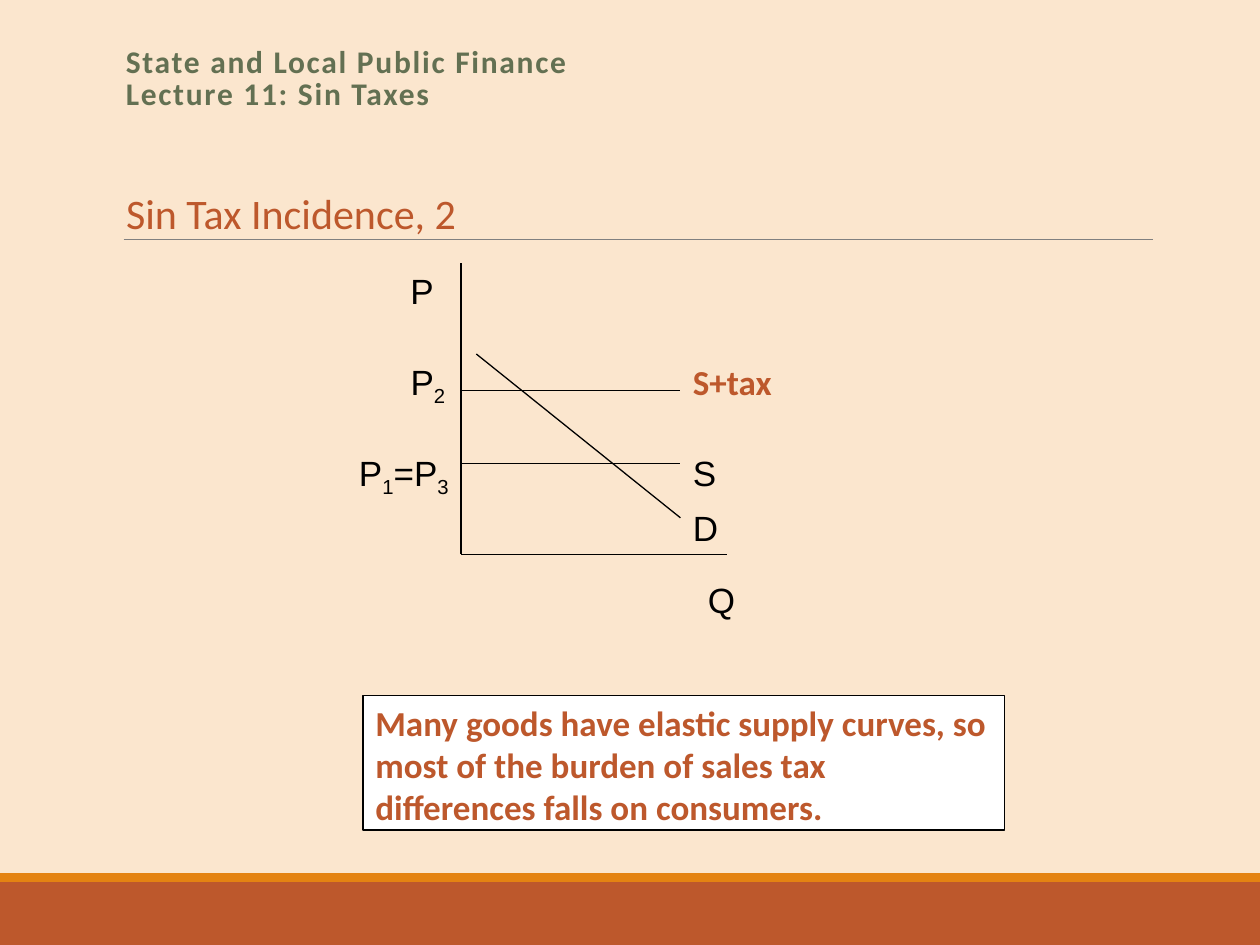
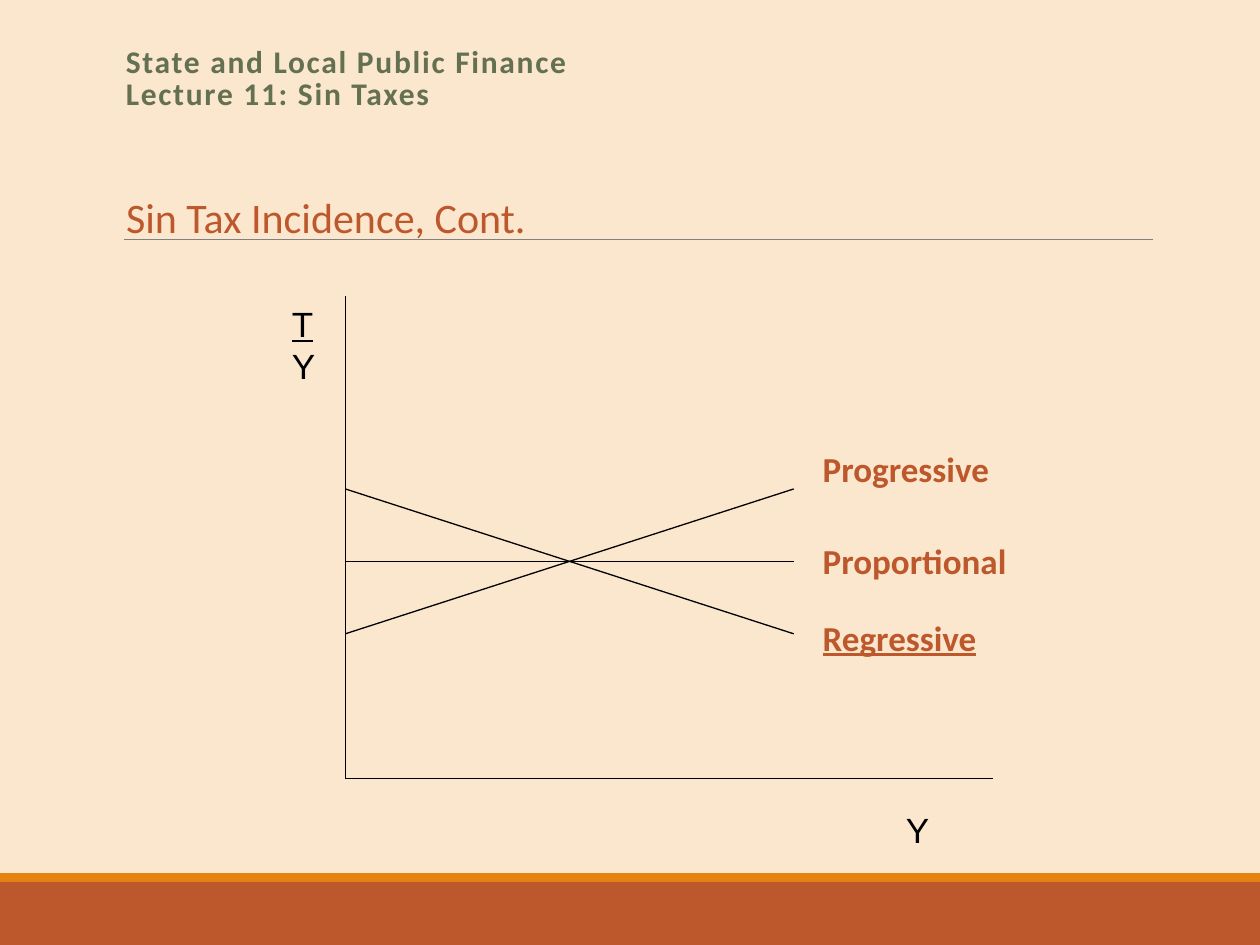
from lxml import etree
from pptx import Presentation
from pptx.dml.color import RGBColor
from pptx.enum.shapes import MSO_CONNECTOR, MSO_SHAPE
from pptx.enum.text import MSO_ANCHOR, PP_ALIGN
from pptx.oxml.ns import qn
from pptx.util import Pt

STRAIGHT = MSO_CONNECTOR.STRAIGHT
RECTANGLE = MSO_SHAPE.RECTANGLE
LEFT, TOP = PP_ALIGN.LEFT, MSO_ANCHOR.TOP

# Shared look
CREAM, RUST, ORANGE, GREEN = "FBE6CE", "BD582C", "E48312", "637052"
GREY, BLACK, WHITE = "808080", "000000", "FFFFFF"
PAGE_WIDTH, PAGE_HEIGHT = 720, 540
COURSE = "State and Local Public Finance\vLecture 11: Sin Taxes"
BANDS = [(504, 36, RUST), (499, 5, ORANGE)]  # top, height, colour
PLAIN = dict(name="Arial", size=20, color=BLACK)
STRONG = dict(name="Calibri", size=20, color=RUST, bold=True)
UNDERLINED_PLAIN = dict(PLAIN, underline=True)
UNDERLINED_STRONG = dict(STRONG, underline=True)

# Content. Lines are x1, y1, x2, y2. Labels are box, then paragraphs of
# (spans, style); every second span is a subscript.
SUPPLY_X, SUPPLY_END = 263.5, 388.8
RATE_X, RATE_END = 197.3, 453.6
RATE_HIGH, RATE_MIDDLE, RATE_LOW = 279.4, 321, 362.2

SLIDES = [
    dict(
        title="Sin Tax Incidence, 2",
        title_top=106.6,
        lines=[
            (SUPPLY_X, 150.5, SUPPLY_X, 316.8),
            (SUPPLY_X, 316.8, 415.4, 316.8),
            (SUPPLY_X, 265, SUPPLY_END, 265),
            (SUPPLY_X, 223.2, SUPPLY_END, 223.2),
            (272.2, 202.3, SUPPLY_END, 295.9),
        ],
        labels=[
            ((227.5, 150.5, 26.6, 41.8), [(["P"], PLAIN)]),
            ((397.4, 326.9, 26.6, 41.8), [(["Q"], PLAIN)]),
            ((SUPPLY_END, 254.2, 44.6, 31), [(["S"], PLAIN)]),
            ((SUPPLY_END, 202.3, 85.7, 31), [(["S+tax"], STRONG)]),
            ((SUPPLY_END, 285.8, 44.6, 31), [(["D"], PLAIN)]),
            ((198, 254.2, 71.3, 31), [(["P", "1", "=P", "3"], PLAIN)]),
            ((227.5, 202.3, 71.3, 31), [(["P", "2"], PLAIN)]),
        ],
        note=((207.4, 397.4, 366.5, 77),
              "Many goods have elastic supply curves, so most of the burden "
              "of sales tax differences falls on consumers."),
    ),
    dict(
        title="Sin Tax Incidence, Cont.",
        title_top=109.4,
        lines=[
            (RATE_X, 169.2, RATE_X, 445),
            (RATE_X, 445, 567.4, 445),
            (RATE_X, RATE_MIDDLE, RATE_END, RATE_MIDDLE),
            (RATE_X, RATE_LOW, RATE_END, RATE_HIGH),
            (RATE_X, RATE_HIGH, RATE_END, RATE_LOW),
        ],
        labels=[
            ((510.5, 458.6, 56.9, 54.7), [(["Y"], PLAIN)]),
            ((159.8, 169.2, 38.2, 82.8),
             [(["T"], UNDERLINED_PLAIN), (["Y"], PLAIN)]),
            ((463, 252, 142.6, 41), [(["Progressive"], STRONG)]),
            ((463, 304.6, 142.6, 41), [(["Proportional"], STRONG)]),
            ((463, 348.5, 142.6, 41), [(["Regressive"], UNDERLINED_STRONG)]),
        ],
    ),
]


def rgb(hex_color):
    return RGBColor.from_string(hex_color)


def points(values):
    return [Pt(value) for value in values]


def style_font(font, name, size, color, bold=False, underline=False):
    font.name, font.size = name, Pt(size)
    font.bold, font.underline = bold, underline
    font.color.rgb = rgb(color)


def add_line(shapes, ends, color=BLACK, width=0.75):
    line = shapes.add_connector(STRAIGHT, *points(ends))
    line.line.color.rgb = rgb(color)
    line.line.width = Pt(width)
    etree.SubElement(line._element.spPr, qn("a:effectLst"))


def add_rectangle(shapes, box, fill, outline=None):
    rectangle = shapes.add_shape(RECTANGLE, *points(box))
    rectangle.shadow.inherit = False
    rectangle.fill.solid()
    rectangle.fill.fore_color.rgb = rgb(fill)
    if outline:
        rectangle.line.color.rgb = rgb(outline)
        rectangle.line.width = Pt(0.75)
    else:
        rectangle.line.fill.background()
    return rectangle


def write(shape, paragraphs):
    frame = shape.text_frame
    frame.word_wrap = True
    frame.vertical_anchor = TOP
    for index, (spans, style) in enumerate(paragraphs):
        para = frame.add_paragraph() if index else frame.paragraphs[0]
        para.alignment = LEFT
        style_font(para.font, **style)
        for place, text in enumerate(spans):
            span = para.add_run()
            span.text = text
            if place % 2:
                span._r.get_or_add_rPr().set("baseline", "-25000")
    return frame


def add_text(shapes, box, paragraphs):
    return write(shapes.add_textbox(*points(box)), paragraphs)


def add_frame(page, title, title_top):
    # Bands and rule
    for top, height, color in BANDS:
        add_rectangle(page.shapes, (0, top, PAGE_WIDTH, height), color)
    add_line(page.shapes, (70.6, 136.8, 658.8, 136.8), GREY, 0.5)

    # Course heading
    heading = dict(name="Calibri", size=18, color=GREEN, bold=True)
    frame = add_text(page.shapes, (64.8, 23.8, 594, 46.8), [([], heading)])
    para = frame.paragraphs[0]
    para.line_spacing = 0.85
    for index, text in enumerate(COURSE.split("\v")):
        if index:
            para.add_line_break()
        span = para.add_run()
        span.text = text
        span._r.get_or_add_rPr().set("spc", "100")

    # Slide title
    style = dict(name="Calibri", size=24, color=RUST)
    frame = add_text(page.shapes, (72, title_top, 594, 316.8),
                     [([title], style)])
    frame.margin_left = frame.margin_right = 0
    para = frame.paragraphs[0]
    para.line_spacing = 0.9
    para.space_before, para.space_after = Pt(6.8), Pt(1.1)
    properties = para._p.get_or_add_pPr()
    properties.set("marL", str(Pt(4.3)))
    properties.set("indent", str(-Pt(4.3)))


def add_diagram(page, lines, labels, note=None):
    shapes = page.shapes.add_group_shape().shapes
    for ends in lines:
        add_line(shapes, ends)
    for box, paragraphs in labels:
        add_text(shapes, box, paragraphs)
    if note:
        box, text = note
        write(add_rectangle(shapes, box, WHITE, BLACK), [([text], STRONG)])


def main():
    deck = Presentation()
    deck.slide_width, deck.slide_height = Pt(PAGE_WIDTH), Pt(PAGE_HEIGHT)
    background = deck.slide_master.background.fill
    background.solid()
    background.fore_color.rgb = rgb(CREAM)
    for content in SLIDES:
        page = deck.slides.add_slide(deck.slide_layouts[6])
        add_frame(page, content["title"], content["title_top"])
        add_diagram(page, content["lines"], content["labels"],
                    content.get("note"))
    deck.save("out.pptx")


if __name__ == "__main__":
    main()
